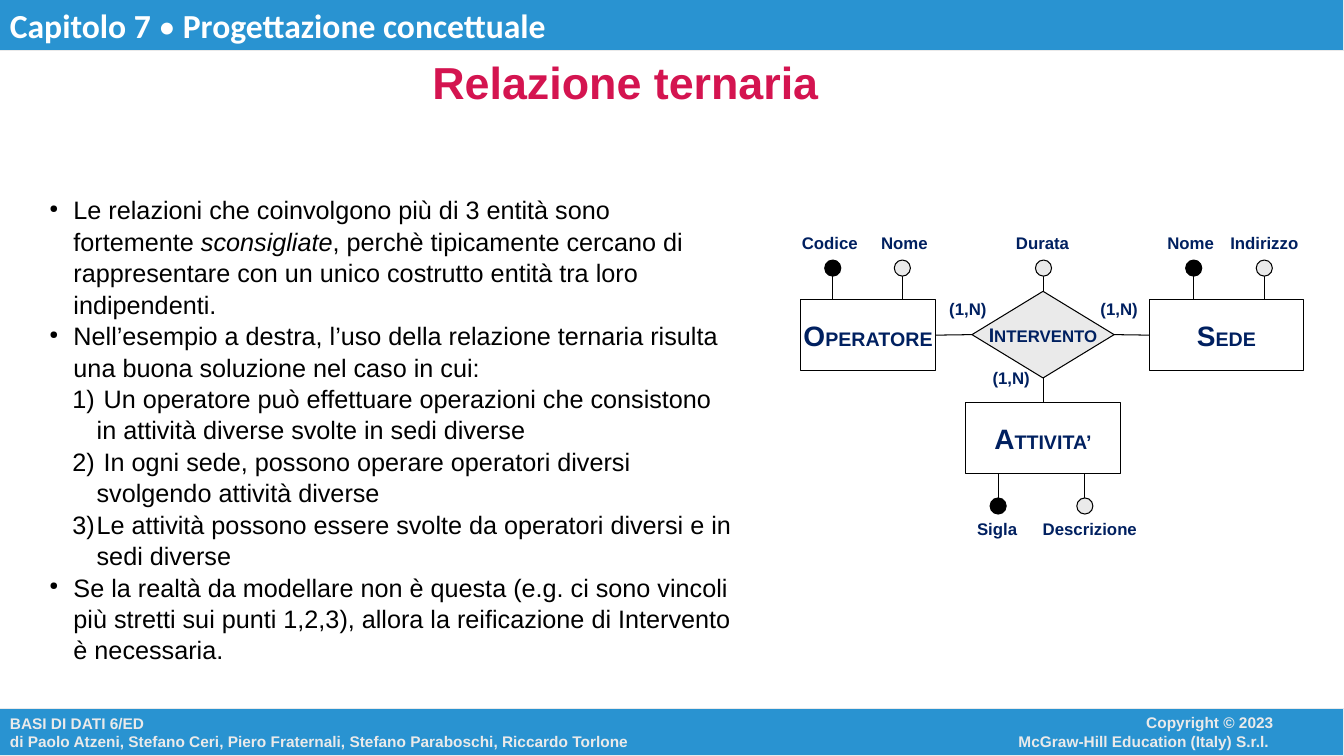
from dataclasses import dataclass

from lxml import etree
from pptx import Presentation
from pptx import util as u
from pptx.dml.color import RGBColor
from pptx.enum import shapes, text
from pptx.oxml.ns import qn

PX = u.Inches(1) // 100


@dataclass(frozen=True)
class Theme:
    band: str = "2993D1"
    pale: str = "EAEAEA"
    white: str = "FFFFFF"
    black: str = "000000"
    title: str = "D41450"
    label: str = "002060"
    font: str = "Arial"
    header_font: str = "Calibri"
    header_size: int = 24
    title_size: int = 32
    body_size: int = 18
    footer_size: int = 11
    entity_sizes: tuple = (20, 14)
    relation_sizes: tuple = (14, 12)
    label_size: int = 12
    line_width: float = 0.75


THEME = Theme()
LEFT, CENTER, RIGHT = text.PP_ALIGN.LEFT, text.PP_ALIGN.CENTER, text.PP_ALIGN.RIGHT
RECTANGLE = shapes.MSO_SHAPE.RECTANGLE
TOP, WEST, BOTTOM, EAST = range(4)


def style_run(run, size, color, bold=True, name=THEME.font):
    run.font.size = u.Pt(size)
    run.font.name = name
    run.font.bold = bold
    run.font.color.rgb = RGBColor.from_string(color)


def set_frame(shape, wrap=True, anchor=text.MSO_ANCHOR.TOP):
    frame = shape.text_frame
    frame.word_wrap = wrap
    frame.vertical_anchor = anchor
    frame.margin_left = frame.margin_right = 10 * PX
    frame.margin_top = frame.margin_bottom = 5 * PX
    return frame


def add_text(slide, box, content, size, color, align=LEFT, wrap=True,
             anchor=text.MSO_ANCHOR.TOP):
    shape = slide.shapes.add_textbox(*(n * PX for n in box))
    write_lines(set_frame(shape, wrap, anchor), content, size, color, align)


def write_lines(frame, content, size, color, align=LEFT):
    frame.text = content
    for paragraph in frame.paragraphs:
        paragraph.alignment = align
        for run in paragraph.runs:
            style_run(run, size, color)


def add_figure(slide, kind, box, fill=None, line=THEME.black, width=THEME.line_width):
    shape = slide.shapes.add_shape(kind, *(n * PX for n in box))
    shape.shadow.inherit = False
    if fill:
        shape.fill.solid()
        shape.fill.fore_color.rgb = RGBColor.from_string(fill)
    else:
        shape.fill.background()
    shape.line.color.rgb = RGBColor.from_string(line)
    shape.line.width = u.Pt(width)
    return shape


def add_line(slide, *ends):
    line = slide.shapes.add_connector(shapes.MSO_CONNECTOR.STRAIGHT, *(n * PX for n in ends))
    line.line.color.rgb = RGBColor.from_string(THEME.black)
    line.line.width = u.Pt(THEME.line_width)
    etree.SubElement(line._element.spPr, qn("a:effectLst"))
    return line


def join(slide, start, start_side, end, end_side):
    line = add_line(slide, 0, 0, 0, 0)
    line.begin_connect(start, start_side)
    line.end_connect(end, end_side)


# Header band
def build_header(slide, box):
    band = add_figure(slide, RECTANGLE, box, THEME.band, THEME.pale, 0)
    paragraph = set_frame(band).paragraphs[0]
    paragraph.alignment = LEFT
    for words, bold in (("Capitolo 7 ", True), ("•", False),
                        (" Progettazione concettuale", True)):
        run = paragraph.add_run()
        run.text = words
        style_run(run, THEME.header_size, THEME.white, bold, THEME.header_font)


# Footer band with authors and copyright
def build_footer(slide, box):
    left, top, width, height = box
    band = add_figure(slide, RECTANGLE, box, THEME.band, THEME.pale)
    write_lines(set_frame(band, False, text.MSO_ANCHOR.MIDDLE),
                "BASI DI DATI 6/ED\ndi Paolo Atzeni, Stefano Ceri, Piero Fraternali, "
                "Stefano Paraboschi, Riccardo Torlone", THEME.footer_size, THEME.pale)
    add_text(slide, (left + 889, top, 384, height),
             "Copyright © 2023\nMcGraw-Hill Education (Italy) S.r.l. ",
             THEME.footer_size, THEME.pale, RIGHT)


def add_marker(paragraph, numbered):
    properties = paragraph._p.get_or_add_pPr()
    properties.set("marL", str((47 if numbered else 24) * PX))
    properties.set("indent", str(-24 * PX))
    color = etree.SubElement(properties, qn("a:buClr"))
    etree.SubElement(color, qn("a:srgbClr")).set("val", THEME.black)
    if numbered:
        properties.set("lvl", "1")
        etree.SubElement(properties, qn("a:buFont")).set("typeface", THEME.font)
        etree.SubElement(properties, qn("a:buAutoNum")).set("type", "arabicParenR")
    else:
        etree.SubElement(properties, qn("a:buSzPct")).set("val", "45000")
        etree.SubElement(properties, qn("a:buChar")).set("char", "●")


# Bulleted text: each item is (numbered, pieces), every second piece in italics
def build_body(slide, box):
    items = (
        (False, ("Le relazioni che coinvolgono più di 3 entità sono fortemente ", "sconsigliate",
                 ", perchè tipicamente cercano di rappresentare con un unico costrutto "
                 "entità tra loro indipendenti.")),
        (False, ("Nell’esempio a destra, l’uso della relazione ternaria risulta una buona "
                 "soluzione nel caso in cui:",)),
        (True, (" Un operatore può effettuare operazioni che consistono in attività "
                "diverse svolte in sedi diverse",)),
        (True, (" In ogni sede, possono operare operatori diversi svolgendo attività diverse",)),
        (True, ("Le attività possono essere svolte da operatori diversi e in sedi diverse",)),
        (False, ("Se la realtà da modellare non è questa (e.g. ci sono vincoli più stretti sui "
                 "punti 1,2,3), allora la reificazione di Intervento è necessaria.",)),
    )
    frame = set_frame(slide.shapes.add_textbox(*(n * PX for n in box)))
    for index, (numbered, pieces) in enumerate(items):
        paragraph = frame.add_paragraph() if index else frame.paragraphs[0]
        add_marker(paragraph, numbered)
        paragraph.line_spacing = 1.04
        for position, words in enumerate(pieces):
            run = paragraph.add_run()
            run.text = words
            style_run(run, THEME.body_size, THEME.black, False)
            run.font.italic = position % 2 == 1


def add_node(slide, kind, box, name, sizes, fill=None):
    node = add_figure(slide, kind, box, fill)
    paragraph = set_frame(node, False, text.MSO_ANCHOR.MIDDLE).paragraphs[0]
    paragraph.alignment = CENTER
    for words, size in zip((name[0], name[1:]), sizes):
        run = paragraph.add_run()
        run.text = words
        style_run(run, size, THEME.label)
    return node


def add_label(slide, center, top, words):
    add_text(slide, (center - 60, top, 120, 30), words, THEME.label_size, THEME.label,
             CENTER, False)


# Attribute: stem, pin (black for a key) and label, above or below its node
def add_attribute(slide, x, edge, pin_y, words, shift, key):
    add_line(slide, x, edge, x, pin_y)
    add_figure(slide, shapes.MSO_SHAPE.OVAL, (x - 8, pin_y - 8, 16, 16),
               THEME.black if key else THEME.pale)
    add_label(slide, x + shift, pin_y - 40 if pin_y < edge else pin_y + 8, words)


# Entity-relationship diagram
def build_diagram(slide, box):
    left, top, width, height = box
    row, pin_top, pin_bottom = top + 71, top + 40, top + 276
    entity_w, entity_h = 153, 71
    relation_x, relation_w = left + 170, 141
    sede_x = left + width - entity_w
    activity_x = relation_x + (relation_w - entity_w) // 2
    activity_y = top + 173

    def entity(x, y, w, name):
        return add_node(slide, RECTANGLE, (x, y, w, entity_h), name, THEME.entity_sizes)

    for attribute in (
        (left + 32, row, pin_top, "Codice", -3, True),
        (left + 101, row, pin_top, "Nome", 2, False),
        (sede_x + 44, row, pin_top, "Nome", -3, True),
        (sede_x + 114, row, pin_top, "Indirizzo", 0, False),
        (relation_x + 71, row, pin_top, "Durata", -1, False),
        (activity_x + 32, activity_y + entity_h, pin_bottom, "Sigla", -1, True),
        (activity_x + 118, activity_y + entity_h, pin_bottom, "Descrizione", 5, False),
    ):
        add_attribute(slide, *attribute)

    operator = entity(left, row, 134, "OPERATORE")
    site = entity(sede_x, row, entity_w, "SEDE")
    activity = entity(activity_x, activity_y, entity_w, "ATTIVITA’")
    relation = add_node(slide, shapes.MSO_SHAPE.DIAMOND, (relation_x, top + 63, relation_w, 86),
                        "INTERVENTO", THEME.relation_sizes, THEME.pale)
    join(slide, relation, WEST, operator, EAST)
    join(slide, relation, EAST, site, WEST)
    join(slide, relation, BOTTOM, activity, TOP)
    for x, y in ((166, 65), (316, 65), (209, 134)):
        add_label(slide, left + x, top + y, "(1,N)")


def main():
    presentation = Presentation()
    presentation.slide_width, presentation.slide_height = 1333 * PX, 750 * PX
    slide = presentation.slides.add_slide(presentation.slide_layouts[6])
    build_footer(slide, (0, 703, 1333, 47))
    build_header(slide, (0, 0, 1333, 50))
    add_text(slide, (110, 50, 1021, 62), "Relazione ternaria", THEME.title_size, THEME.title,
             CENTER, anchor=text.MSO_ANCHOR.MIDDLE)
    build_diagram(slide, (794, 226, 499, 314))
    build_body(slide, (39, 187, 701, 455))
    presentation.save("out.pptx")


if __name__ == "__main__":
    main()
